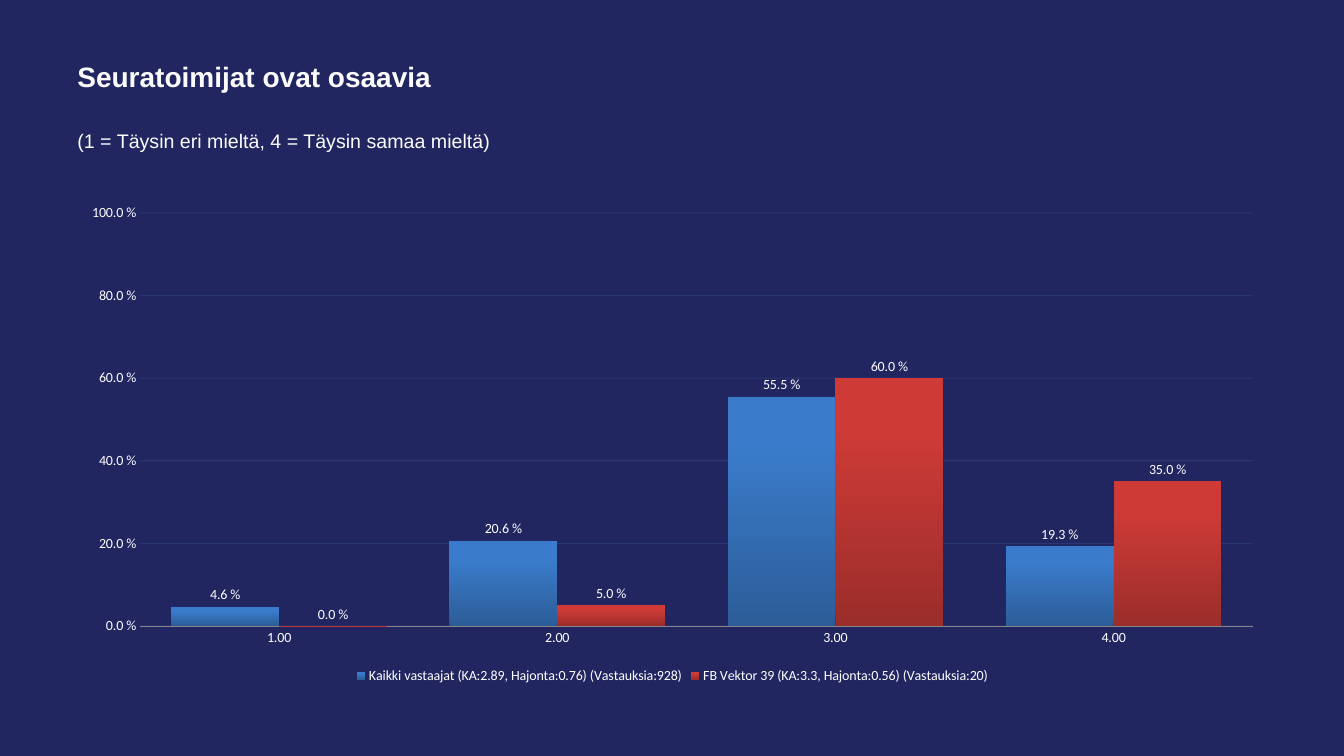
from lxml import etree
from pptx import Presentation
from pptx import util as u
from pptx.chart import data
from pptx.dml import color
from pptx.enum import chart as ch
from pptx.enum import text
from pptx.oxml import parse_xml
from pptx.oxml.ns import nsdecls, qn

COLORS = {
    "navy": "212560",
    "text": "FCFCFC",
    "white": "FFFFFF",
    "grid": "4F81BD",
    "axis": "868686",
    "blue": "3A7CCB",
    "dark_blue": "2C5D98",
    "red": "CE3B37",
    "dark_red": "9B2D2A",
}
PERCENT = "0.0\\ %"


class Deck:
    def __init__(self, width, height):
        self.prs = Presentation()
        self.prs.slide_width = u.Cm(width)
        self.prs.slide_height = u.Cm(height)
        self.s = self.prs.slides.add_slide(self.prs.slide_layouts[6])
        self.paint(self.s.background.fill, "navy")

    def rgb(self, name):
        return color.RGBColor.from_string(COLORS[name])

    def paint(self, fill, name):
        fill.solid()
        fill.fore_color.rgb = self.rgb(name)

    def style(self, font, name, size, color_name, bold=False):
        font.name = name
        font.size = u.Pt(size)
        font.bold = bold
        font.color.rgb = self.rgb(color_name)

    def text(self, box, words, size, bold=False, anchor=text.MSO_ANCHOR.TOP):
        tf = self.s.shapes.add_textbox(*map(u.Cm, box)).text_frame
        tf.word_wrap = True
        tf.vertical_anchor = anchor
        r = tf.paragraphs[0].add_run()
        r.text = words
        self.style(r.font, "Arial", size, "text", bold)

    def gradient(self, fill, bottom, top):
        fill.gradient()
        fill.gradient_angle = 90
        start, end = fill.gradient_stops
        start.color.rgb = self.rgb(bottom)
        end.color.rgb = self.rgb(top)
        end.position = 0.8

    def columns(self, box, categories, series, plot_box):
        cd = data.CategoryChartData()
        cd.categories = categories
        for name, values, _ in series:
            cd.add_series(name, values)
        frame = self.s.shapes.add_chart(
            ch.XL_CHART_TYPE.COLUMN_CLUSTERED, *map(u.Cm, box), cd)
        chart = frame.chart
        chart.has_title = False
        self.style(chart.font, "Calibri", 10, "white")
        chart.has_legend = True
        chart.legend.position = ch.XL_LEGEND_POSITION.BOTTOM
        chart.legend.include_in_layout = False
        self.axes(chart)
        plot = chart.plots[0]
        plot.gap_width = 58
        plot.overlap = 0
        plot.vary_by_categories = False
        for ser, (_, _, shades) in zip(plot.series, series):
            self.gradient(ser.format.fill, *shades)
            ser.invert_if_negative = False
            labels = ser.data_labels
            labels.show_value = True
            labels.number_format = PERCENT
            labels.number_format_is_linked = False
            labels.position = ch.XL_LABEL_POSITION.OUTSIDE_END
        self.place_plot(chart, plot_box)

    def axes(self, chart):
        cat, val = chart.category_axis, chart.value_axis
        for axis in (cat, val):
            axis.major_tick_mark = ch.XL_TICK_MARK.NONE
            axis.minor_tick_mark = ch.XL_TICK_MARK.NONE
        self.paint(cat.format.line.fill, "axis")
        cat.format.line.width = u.Pt(0.75)
        val.minimum_scale, val.maximum_scale, val.major_unit = 0, 1, 0.2
        val.tick_labels.number_format = PERCENT
        val.tick_labels.number_format_is_linked = False
        val.format.line.fill.background()
        val.has_major_gridlines = True
        grid = val.major_gridlines
        self.paint(grid.format.line.fill, "grid")
        grid.format.line.width = u.Pt(0.75)
        clr = next(val._element.find(qn("c:majorGridlines")).iter(qn("a:srgbClr")))
        etree.SubElement(clr, qn("a:alpha")).set("val", "20000")

    def place_plot(self, chart, plot_box):
        area = chart._chartSpace.chart.plotArea
        for old in area.findall(qn("c:layout")):
            area.remove(old)
        sizes = "".join(f'<c:{k} val="{v}"/>' for k, v in zip("xywh", plot_box))
        area.insert(0, parse_xml(
            f'<c:layout {nsdecls("c")}><c:manualLayout>'
            '<c:layoutTarget val="inner"/><c:xMode val="edge"/><c:yMode val="edge"/>'
            f'{sizes}</c:manualLayout></c:layout>'))


def main():
    deck = Deck(33.87, 19.05)
    left, width = 1.7, 30.48
    deck.text((left, 0.91, width, 2.01), "Seuratoimijat ovat osaavia",
              20, True, text.MSO_ANCHOR.MIDDLE)
    deck.text((left, 3.12, width, 1.5),
              "(1 = Täysin eri mieltä, 4 = Täysin samaa mieltä)", 14)
    deck.columns(
        (left, 4.93, width, 12.4),
        ["1.00", "2.00", "3.00", "4.00"],
        [("Kaikki vastaajat (KA:2.89, Hajonta:0.76) (Vastauksia:928)",
          (0.046, 0.206, 0.555, 0.193), ("dark_blue", "blue")),
         ("FB Vektor 39 (KA:3.3, Hajonta:0.56) (Vastauksia:20)",
          (0, 0.05, 0.6, 0.35), ("dark_red", "red"))],
        (0.06, 0.035, 0.92, 0.84))
    deck.prs.save("out.pptx")


if __name__ == "__main__":
    main()
